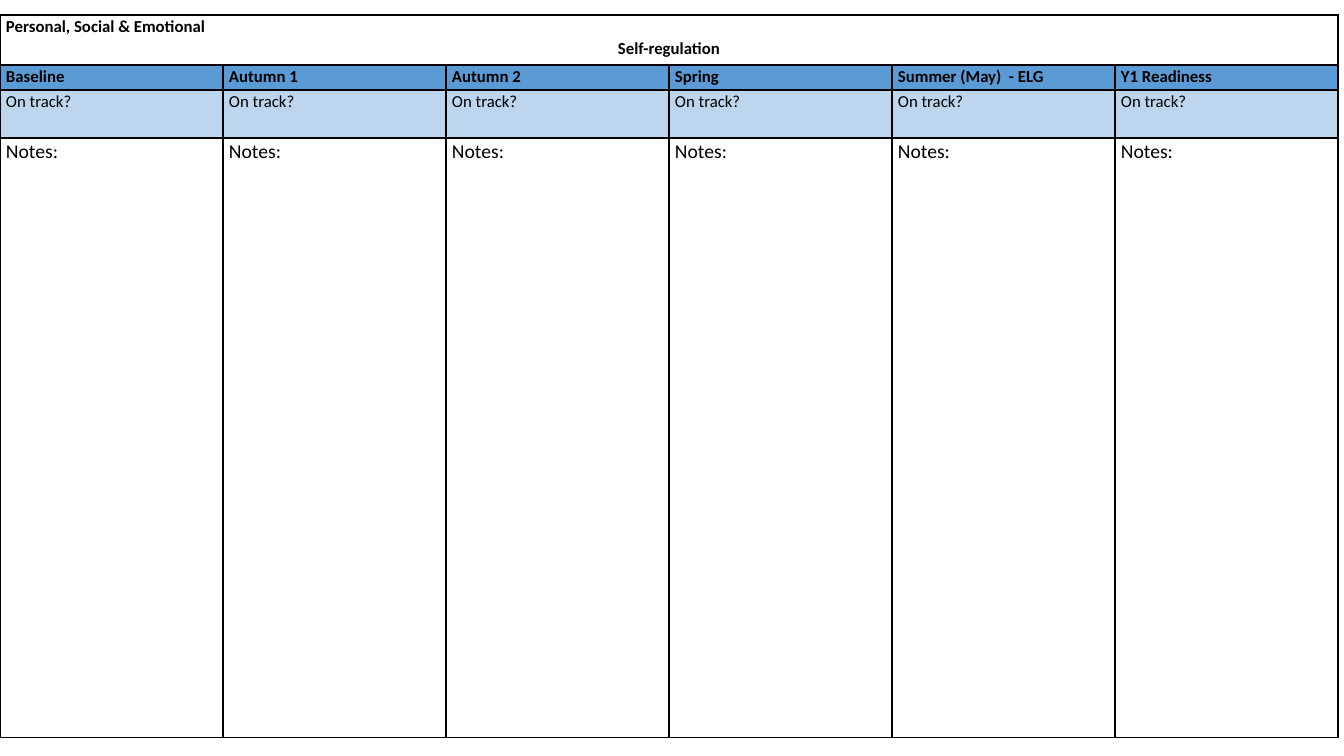
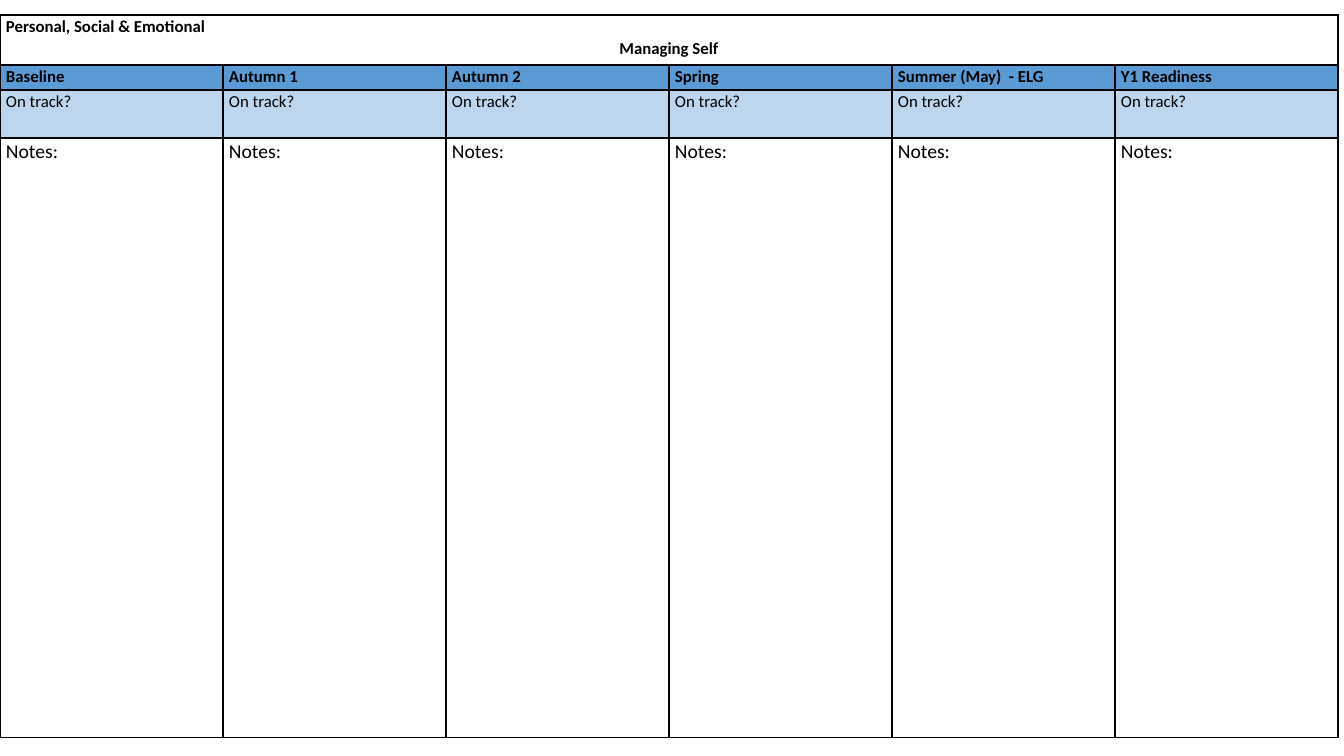
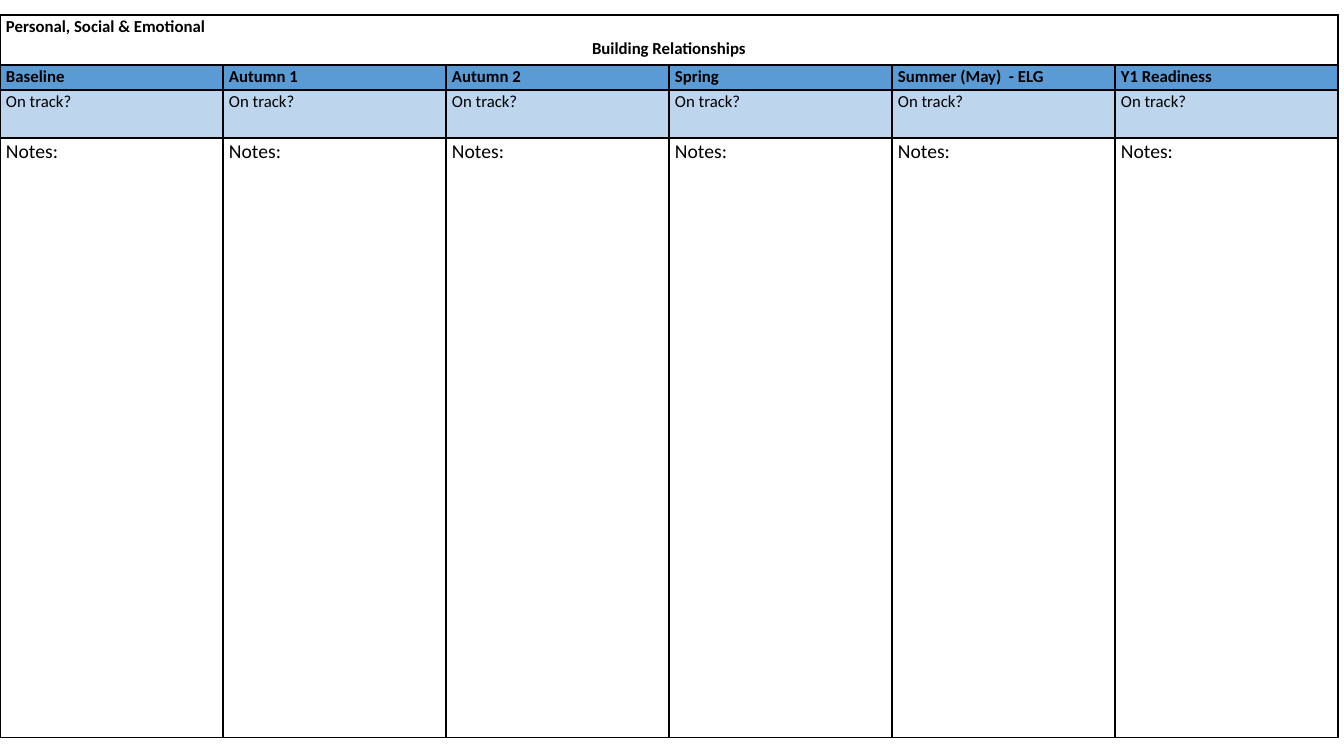
from dataclasses import dataclass

import lxml.etree
import pptx
import pptx.dml.color
import pptx.enum.text
import pptx.oxml.ns
import pptx.util

EMU_PER_PX = 914400 / 100.8
SLIDE_WIDTH, SLIDE_HEIGHT = 1344, 756
TABLE_TOP = 15
COLUMN_WIDTH = 223
SIDE_MARGIN = 6
BORDER_PT = 1
LINE_SPACING = 1.07
FONT = "Calibri"
COLOURS = {"ink": "000000", "header": "5B9BD5", "track": "BDD6EE"}

AREA = "Personal, Social & Emotional"
GOALS = ("Self-regulation", "Managing Self", "Building Relationships")
TERMS = ("Baseline", "Autumn 1", "Autumn 2", "Spring", "Summer (May)  - ELG", "Y1 Readiness")


@dataclass(frozen=True)
class Band:
    """One table row: its height, cell texts and look."""
    height: int
    texts: tuple[str, ...] = ()
    size: int = 12
    bold: bool = False
    fill: str | None = None


TITLE = Band(50, bold=True)
TERM_BANDS = (
    Band(25, TERMS, bold=True, fill="header"),
    Band(48, ("On track?",) * len(TERMS), fill="track"),
    Band(600, ("Notes:",) * len(TERMS), size=14),
)
BANDS = (TITLE, *TERM_BANDS)


def px(length: int) -> pptx.util.Emu:
    return pptx.util.Emu(round(length * EMU_PER_PX))


def rgb(name: str) -> pptx.dml.color.RGBColor:
    return pptx.dml.color.RGBColor.from_string(COLOURS[name])


def add_borders(cell) -> None:
    properties = cell._tc.get_or_add_tcPr()
    for side in ("lnL", "lnR", "lnT", "lnB"):
        line = lxml.etree.SubElement(properties, pptx.oxml.ns.qn(f"a:{side}"),
                                     w=str(pptx.util.Pt(BORDER_PT)))
        fill = lxml.etree.SubElement(line, pptx.oxml.ns.qn("a:solidFill"))
        lxml.etree.SubElement(fill, pptx.oxml.ns.qn("a:srgbClr"), val=COLOURS["ink"])


def style_cell(cell, band: Band) -> None:
    cell.margin_left = cell.margin_right = px(SIDE_MARGIN)
    cell.margin_top = cell.margin_bottom = 0
    add_borders(cell)
    if band.fill:
        cell.fill.solid()
        cell.fill.fore_color.rgb = rgb(band.fill)
    else:
        cell.fill.background()


def write(paragraph, text: str, band: Band) -> None:
    paragraph.line_spacing = LINE_SPACING
    run = paragraph.add_run()
    run.text = text
    run.font.name = FONT
    run.font.size = pptx.util.Pt(band.size)
    run.font.bold = band.bold
    run.font.color.rgb = rgb("ink")


def add_goal_slide(presentation, goal: str) -> None:
    slide = presentation.slides.add_slide(presentation.slide_layouts[6])
    table = slide.shapes.add_table(
        len(BANDS), len(TERMS), 0, px(TABLE_TOP),
        px(COLUMN_WIDTH * len(TERMS)), px(sum(band.height for band in BANDS))).table
    table.first_row = table.horz_banding = False
    for column in table.columns:
        column.width = px(COLUMN_WIDTH)

    for row, band in zip(table.rows, BANDS):
        row.height = px(band.height)
        for cell in row.cells:
            style_cell(cell, band)
        for cell, text in zip(row.cells, band.texts):
            write(cell.text_frame.paragraphs[0], text, band)

    title = table.cell(0, 0)
    title.merge(table.cell(0, len(TERMS) - 1))
    write(title.text_frame.paragraphs[0], AREA, TITLE)
    goal_line = title.text_frame.add_paragraph()
    goal_line.alignment = pptx.enum.text.PP_ALIGN.CENTER
    write(goal_line, goal, TITLE)


def main() -> None:
    presentation = pptx.Presentation()
    presentation.slide_width = px(SLIDE_WIDTH)
    presentation.slide_height = px(SLIDE_HEIGHT)
    for goal in GOALS:
        add_goal_slide(presentation, goal)
    presentation.save("out.pptx")


if __name__ == "__main__":
    main()
